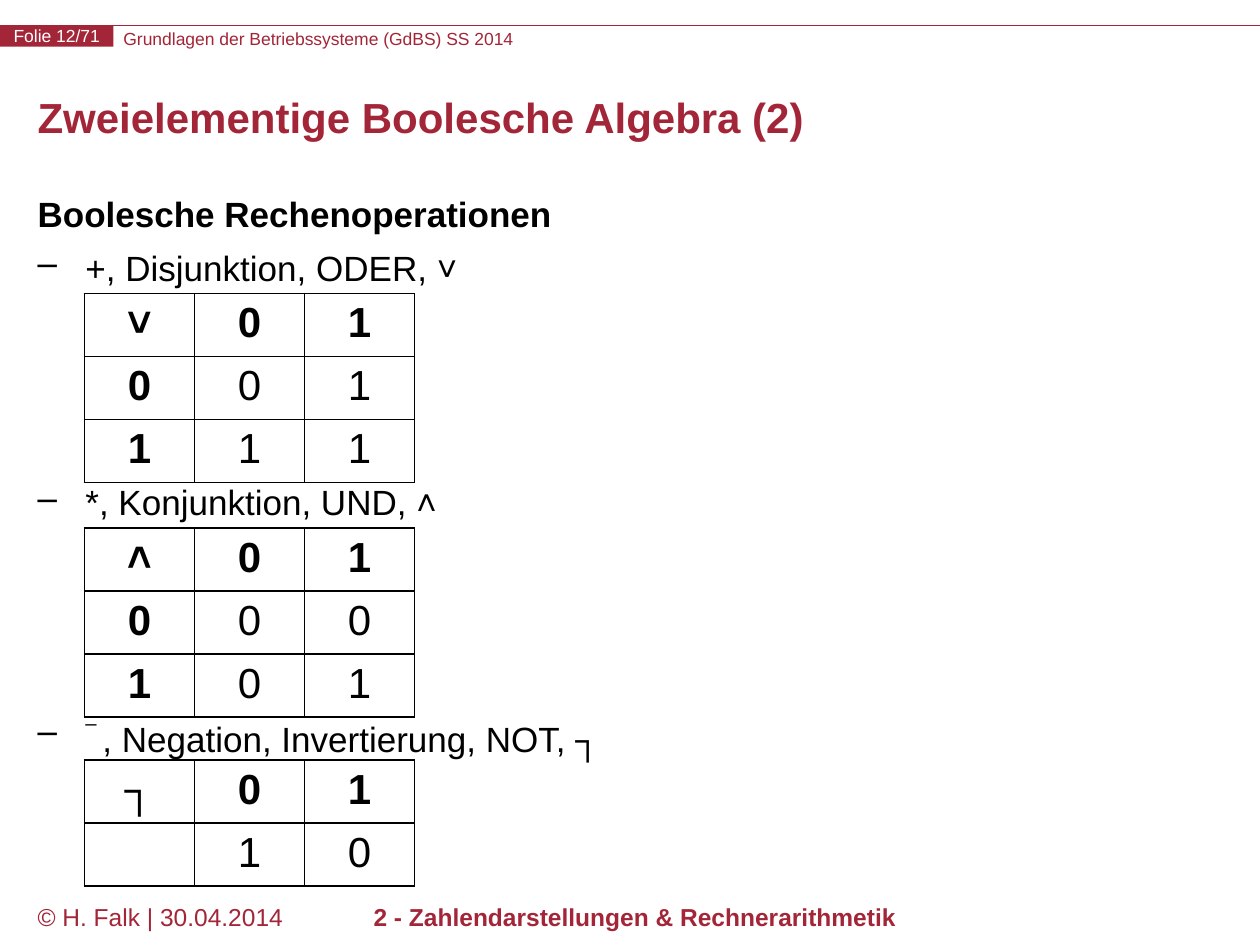
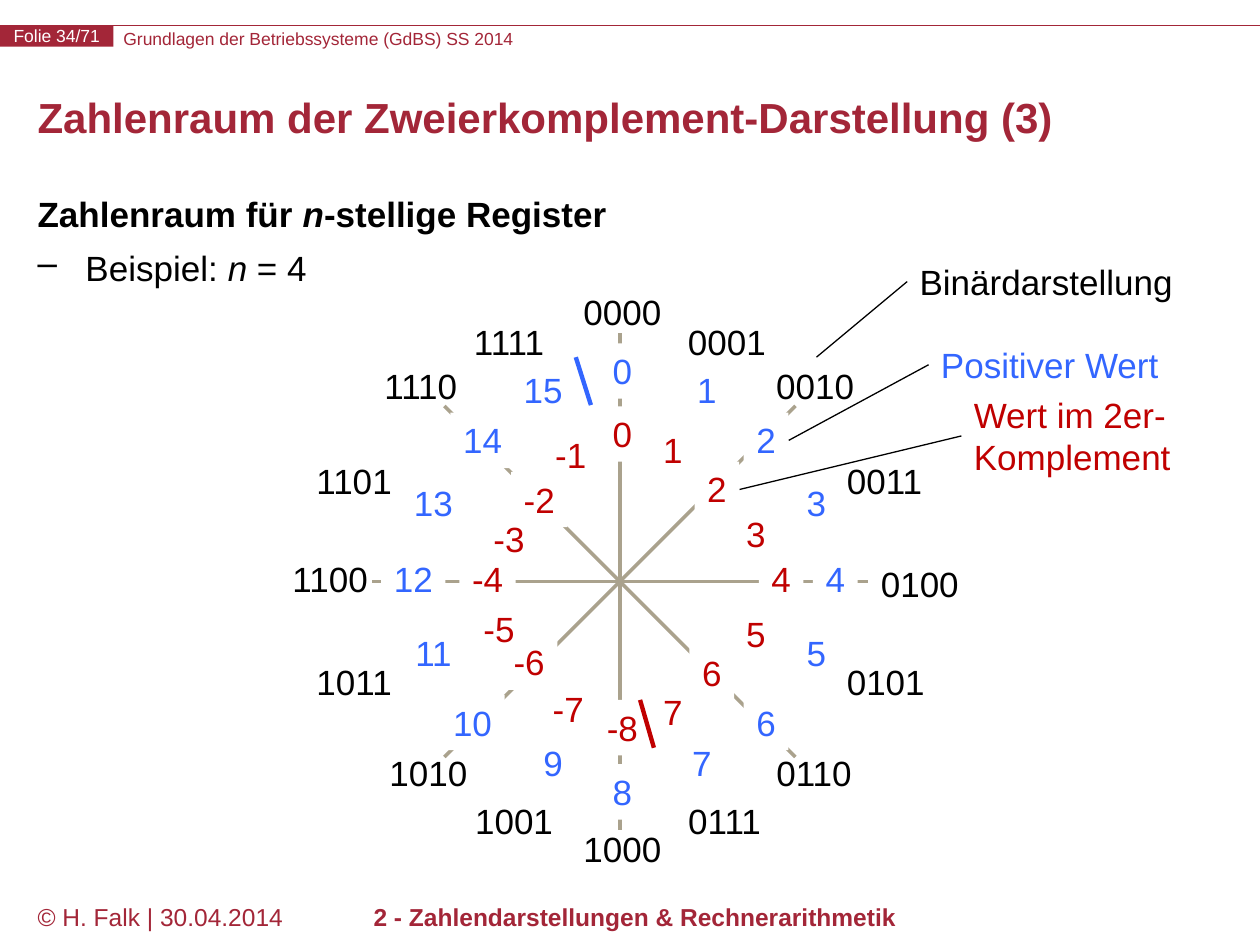
from dataclasses import dataclass
from math import cos, radians, sin

from lxml import etree
from pptx import Presentation
from pptx import util as u
from pptx.dml import color
from pptx.enum import shapes, text
from pptx.oxml import ns


@dataclass(frozen=True)
class Theme:
    font: str = "Arial"
    crimson: str = "A32638"
    black: str = "000000"
    white: str = "FFFFFF"
    blue: str = "3366FF"
    red: str = "C00000"
    spoke: str = "AAA28D"
    header: int = 10
    footer: int = 14
    body: int = 20
    title: int = 24


@dataclass(frozen=True)
class Box:
    x: float
    y: float
    w: float
    h: float

    def inside(self, x, y, w, h):
        return Box(self.x + x, self.y + y, w, h)

    def around(self, dx, dy, w, h):
        cx, cy = self.point(dx, dy)
        return Box(cx - w / 2, cy - h / 2, w, h)

    def point(self, dx, dy):
        return self.x + self.w / 2 + dx, self.y + self.h / 2 + dy

    def emu(self):
        return [grid(v) for v in (self.x, self.y, self.w, self.h)]


T = Theme()
COLUMNS, ROWS = 100, 75
UNIT = u.Inches(10) // COLUMNS
PAGE = Box(0, 0, COLUMNS, ROWS)
LABEL_ROWS = 4.4

BINARY_SPOTS = [
    (0.2, -21.4), (8.5, -19), (15.5, -15.5), (21, -8),
    (23.8, 0.2), (21.1, 8), (15.4, 15.2), (8.3, 19),
    (0.2, 21.2), (-8.4, 19), (-15.2, 15.2), (-21.1, 8),
    (-23, -0.2), (-21.1, -8), (-15.8, -15.5), (-8.8, -19),
]
UNSIGNED_SPOTS = [
    (0.2, -16.7), (6.9, -15.2), (11.6, -11.2), (15.6, -6.2),
    (17.1, -0.2), (15.6, 5.7), (11.6, 11.2), (6.5, 14.4),
    (0.2, 16.7), (-5.3, 14.4), (-11.7, 11.2), (-14.8, 5.7),
    (-16.4, -0.2), (-14.8, -6.2), (-10.9, -11.2), (-6.1, -15.2),
]
SIGNED_SPOTS = [
    (0.2, -11.7), (4.2, -10.4), (7.7, -7.3), (10.8, -3.8),
    (12.8, -0.2), (10.8, 4.2), (7.3, 7.3), (4.2, 10.4),
    (0.2, 11.6), (-4.1, 10.1), (-7.2, 6.4), (-9.6, 3.8),
    (-10.5, -0.2), (-8.8, -3.4), (-6.4, -6.5), (-3.9, -10),
]


def grid(value):
    return round(value * UNIT)


def rgb(value):
    return color.RGBColor.from_string(value)


def write(paragraph, runs, size=T.body, ink=T.black, bold=False, align=None,
          spacing=None, before=None, hanging=False, bullet=None):
    if align is not None:
        paragraph.alignment = align
    if spacing is not None:
        paragraph.line_spacing = spacing
    if before is not None:
        paragraph.space_before = u.Pt(before)
    if hanging:
        props = paragraph._p.get_or_add_pPr()
        props.set("marL", str(grid(3.8)))
        props.set("indent", str(grid(-3.8)))
        if bullet:
            etree.SubElement(props, ns.qn("a:buChar")).set("char", bullet)
    for wording, style in [(runs, "")] if isinstance(runs, str) else runs:
        for number, line in enumerate(wording.split("\n")):
            if number:
                paragraph.add_line_break()
            run = paragraph.add_run()
            run.text = line
            run.font.name = T.font
            run.font.size = u.Pt(size)
            run.font.bold = bold
            run.font.color.rgb = rgb(ink)
            if style == "italic":
                run.font.italic = True
            if style == "raised":
                run._r.get_or_add_rPr().set("baseline", "60000")


def area(slide, box, fill=None, wrap=True, margins=True, fit=False,
         anchor=text.MSO_ANCHOR.TOP):
    if fill:
        holder = slide.shapes.add_shape(shapes.MSO_SHAPE.RECTANGLE, *box.emu())
        holder.shadow.inherit = False
        holder.fill.solid()
        holder.fill.fore_color.rgb = rgb(fill)
        holder.line.fill.background()
    else:
        holder = slide.shapes.add_textbox(*box.emu())
    frame = holder.text_frame
    frame.word_wrap = wrap
    frame.vertical_anchor = anchor
    if fit:
        frame.auto_size = text.MSO_AUTO_SIZE.SHAPE_TO_FIT_TEXT
    if not margins:
        frame.margin_left = frame.margin_right = 0
        frame.margin_top = frame.margin_bottom = 0
    return frame


def stroke(slide, start, end, ink, width):
    ends = [grid(v) for v in (*start, *end)]
    line = slide.shapes.add_connector(shapes.MSO_CONNECTOR.STRAIGHT, *ends)
    line.line.color.rgb = rgb(ink)
    line.line.width = u.Pt(width)
    etree.SubElement(line._element.spPr, ns.qn("a:effectLst"))


def header(slide, box, folio):
    stroke(slide, (box.x, box.y), (box.x + box.w, box.y), T.crimson, 0.75)
    course = area(slide, box.inside(9.8, 0.2, 66, 1.7), margins=False, fit=True)
    write(course.paragraphs[0], "Grundlagen der Betriebssysteme (GdBS) SS 2014",
          size=T.header, ink=T.crimson)
    badge = area(slide, box.inside(0, 0, 9, 1.7), fill=T.crimson, wrap=False,
                 margins=False, anchor=text.MSO_ANCHOR.MIDDLE)
    write(badge.paragraphs[0], f"Folie {folio}/71", size=T.header, ink=T.white,
          align=text.PP_ALIGN.CENTER)


def footer(slide, box):
    author = area(slide, box.inside(2, 0, 22, box.h))
    write(author.paragraphs[0], "© H. Falk | 30.04.2014", size=T.footer, ink=T.crimson)
    chapter = area(slide, box.inside(20.1, 0, 60.6, box.h))
    write(chapter.paragraphs[0], "2 - Zahlendarstellungen & Rechnerarithmetik",
          size=T.footer, ink=T.crimson, bold=True, align=text.PP_ALIGN.CENTER)


def outline(slide, box, heading, points):
    frame = area(slide, box)
    write(frame.paragraphs[0], heading, bold=True, spacing=0.9, before=1.5, hanging=True)
    for runs, before in points:
        write(frame.add_paragraph(), runs, spacing=1.2, before=before,
              hanging=True, bullet="–")


def lecture_slide(deck, folio, title, heading, points):
    slide = deck.slides.add_slide(deck.slide_layouts[6])
    header(slide, PAGE.inside(0, 2, COLUMNS, 2), folio)
    footer(slide, PAGE.inside(0, 71.1, COLUMNS, 3.9))
    headline = area(slide, PAGE.inside(2, 6, 96.1, 7.2), anchor=text.MSO_ANCHOR.MIDDLE)
    write(headline.paragraphs[0], title, size=T.title, ink=T.crimson, bold=True,
          spacing=u.Pt(24))
    outline(slide, PAGE.inside(2, 15.2, 96.1, 54.6), heading, points)
    return slide


def border(cell):
    props = cell._tc.get_or_add_tcPr()
    for position, side in enumerate(("a:lnL", "a:lnR", "a:lnT", "a:lnB")):
        edge = etree.Element(ns.qn(side), w=str(u.Pt(1)))
        fill = etree.SubElement(edge, ns.qn("a:solidFill"))
        etree.SubElement(fill, ns.qn("a:srgbClr")).set("val", T.black)
        props.insert(position, edge)


def truth_table(slide, box, rows):
    table = slide.shapes.add_table(len(rows), len(rows[0]), *box.emu()).table
    table.first_row = table.horz_banding = False
    for row, values in enumerate(rows):
        table.rows[row].height = grid(box.h / len(rows))
        for column, value in enumerate(values):
            table.columns[column].width = grid(box.w / len(values))
            cell = table.cell(row, column)
            cell.fill.background()
            border(cell)
            if value.strip():
                write(cell.text_frame.paragraphs[0], value, size=T.title,
                      bold=row == 0 or column == 0, align=text.PP_ALIGN.CENTER)


def ring(slide, dial, values, spots, ink, fill=None):
    for value, spot in zip(values, spots):
        width = 2 + sum(0.92 if sign == "-" else 1.55 for sign in value)
        label = area(slide, dial.around(*spot, width, LABEL_ROWS), fill=fill,
                     wrap=False, fit=True)
        write(label.paragraphs[0], value, ink=ink, align=text.PP_ALIGN.CENTER)


def callout(slide, dial, wording, ink, corner, size, target):
    left, top = dial.point(*corner)
    label = area(slide, Box(left, top, *size), wrap=False, fit=True)
    write(label.paragraphs[0], wording, ink=ink)
    stroke(slide, (left, top + size[1] / 2), dial.point(*target), T.black, 0.75)


def number_dial(slide, dial):
    hub = dial.point(0, 0)
    for angle in range(0, 360, 45):
        reach = dial.w / 2
        tip = dial.point(reach * cos(radians(angle)), reach * sin(radians(angle)))
        stroke(slide, hub, tip, T.spoke, 2)

    codes = range(16)
    ring(slide, dial, [f"{n:04b}" for n in codes], BINARY_SPOTS, T.black)
    callout(slide, dial, "Binärdarstellung", T.black,
            (22.8, -26), (22.3, LABEL_ROWS), (15.6, -17.8))

    ring(slide, dial, [str(n) for n in codes], UNSIGNED_SPOTS, T.blue, T.white)
    stroke(slide, dial.point(-3.5, -17.8), dial.point(-2.3, -14), T.blue, 2.5)
    callout(slide, dial, "Positiver Wert", T.blue,
            (24.5, -19.4), (19.4, LABEL_ROWS), (13.4, -11.2))

    signed = [str(n if n < 8 else n - 16) for n in codes]
    ring(slide, dial, signed, SIGNED_SPOTS, T.red, T.white)
    callout(slide, dial, "Wert im 2er-\nKomplement", T.red,
            (27.1, -15.4), (17.8, 7.7), (9.5, -7.3))
    stroke(slide, dial.point(1.6, 9.4), dial.point(2.7, 13.2), T.red, 2.5)


def boolean_slide(deck):
    slide = lecture_slide(
        deck, 12, "Zweielementige Boolesche Algebra (2)", "Boolesche Rechenoperationen",
        [("+, Disjunktion, ODER, ˅", 1.5),
         ("*, Konjunktion, UND, ˄", 105),
         ([("– ", "raised"), (", Negation, Invertierung, NOT, ┐", "")], 102)])
    operations = [(23.3, ("˅01", "001", "111")),
                  (41.9, ("˄01", "000", "101")),
                  (60.3, ("┐01", " 10"))]
    for top, rows in operations:
        truth_table(slide, PAGE.inside(6.7, top, 26.2, 4.07 * len(rows)), rows)


def complement_slide(deck):
    slide = lecture_slide(
        deck, 34, "Zahlenraum der Zweierkomplement-Darstellung (3)",
        [("Zahlenraum für ", ""), ("n", "italic"), ("-stellige Register", "")],
        [([("Beispiel: ", ""), ("n", "italic"), (" = 4", "")], 1.5)])
    number_dial(slide, PAGE.inside(29.5, 26.45, 39.4, 39.4))


def main():
    deck = Presentation()
    deck.slide_width, deck.slide_height = COLUMNS * UNIT, ROWS * UNIT
    boolean_slide(deck)
    complement_slide(deck)
    deck.save("out.pptx")


if __name__ == "__main__":
    main()
